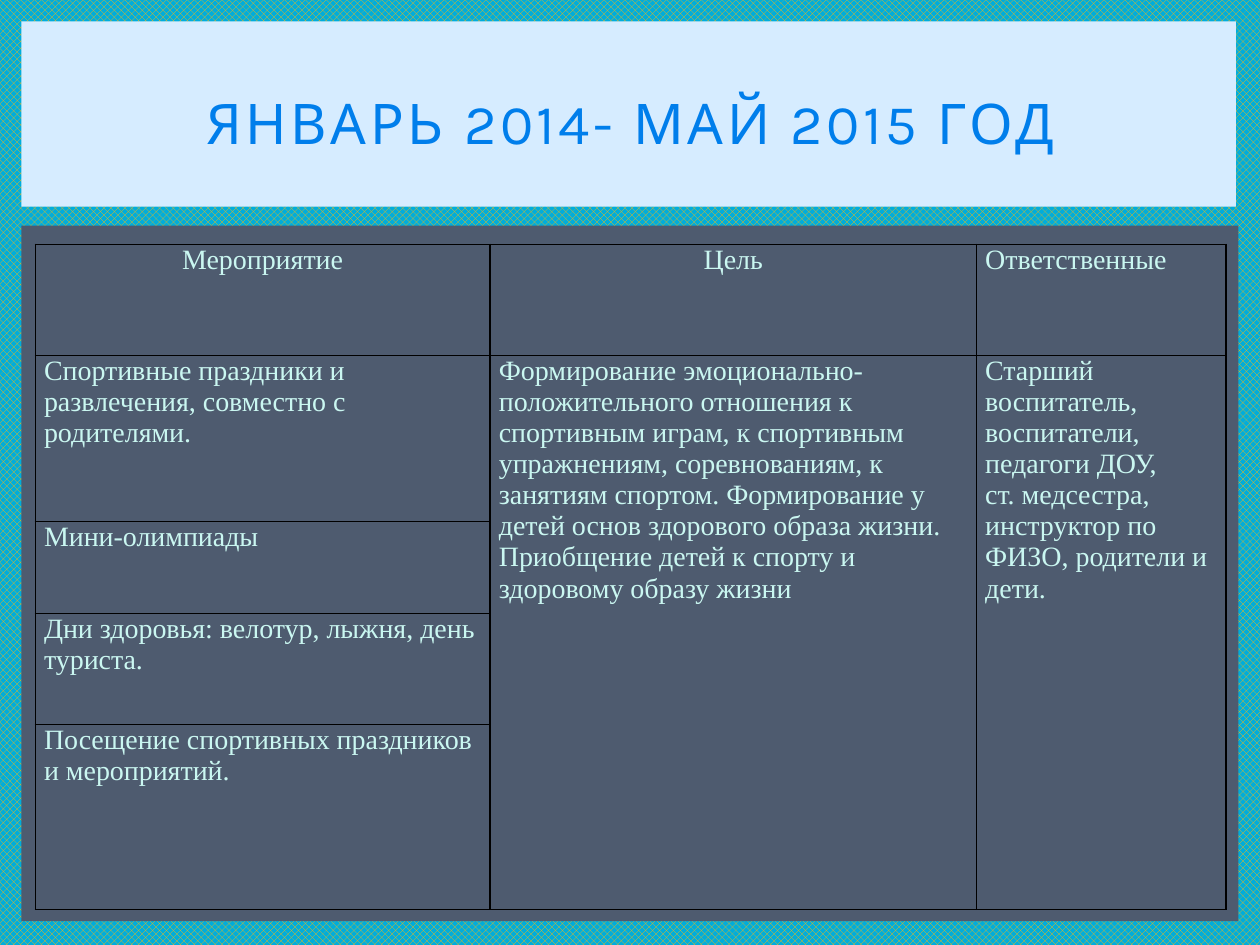
"""Build the slide with the January 2014 – May 2015 sports events plan."""
from typing import NamedTuple

from lxml.etree import SubElement
from pptx import Presentation
from pptx.dml.color import RGBColor
from pptx.enum.dml import MSO_PATTERN
from pptx.enum.shapes import MSO_SHAPE
from pptx.enum.text import MSO_ANCHOR, MSO_AUTO_SIZE, PP_ALIGN
from pptx.oxml.ns import qn
from pptx.util import Inches, Pt

TEAL = RGBColor(0x00, 0xAD, 0xDC)
AMBER = RGBColor(0xFE, 0xB8, 0x0A)
SLATE = RGBColor(0x4E, 0x5B, 0x6F)
PALE_BLUE = RGBColor(0xD6, 0xEC, 0xFF)
BLUE = RGBColor(0x00, 0x7E, 0xEB)
MINT = RGBColor(0xCA, 0xF7, 0xF1)
BLACK = RGBColor(0x00, 0x00, 0x00)

COLUMN_WIDTHS = (3.61, 3.86, 1.98)
ROW_HEIGHTS = (0.88, 1.32, 0.73, 0.88, 1.47)


class Panel(NamedTuple):
    left: float
    top: float
    width: float
    height: float
    color: RGBColor


class Entry(NamedTuple):
    row: int
    column: int
    text: str
    align: PP_ALIGN = PP_ALIGN.LEFT
    row_span: int = 1


PANELS = (
    Panel(0.17, 1.79, 9.66, 5.52, SLATE),
    Panel(0.17, 0.17, 9.64, 1.47, PALE_BLUE),
)
ENTRIES = (
    Entry(0, 0, "Мероприятие", PP_ALIGN.CENTER),
    Entry(0, 1, "Цель", PP_ALIGN.CENTER),
    Entry(0, 2, "Ответственные"),
    Entry(1, 0, "Спортивные праздники и развлечения, совместно с родителями."),
    Entry(2, 0, "Мини-олимпиады"),
    Entry(3, 0, "Дни здоровья: велотур, лыжня, день туриста."),
    Entry(4, 0, "Посещение спортивных праздников и мероприятий."),
    Entry(
        1, 1,
        "Формирование эмоционально-положительного отношения к спортивным играм, "
        "к спортивным упражнениям, соревнованиям, к занятиям спортом. "
        "Формирование у детей основ здорового образа жизни. "
        "Приобщение детей к спорту и здоровому образу жизни",
        row_span=4,
    ),
    Entry(
        1, 2,
        "Старший воспитатель, воспитатели,\nпедагоги ДОУ,\nст. медсестра,\n"
        "инструктор по ФИЗО, родители и дети.",
        row_span=4,
    ),
)


def format_text(text_frame, font_name: str, size: int, color: RGBColor, align: PP_ALIGN) -> None:
    for paragraph in text_frame.paragraphs:
        paragraph.alignment = align
        for run in paragraph.runs:
            run.font.name = font_name
            run.font.size = Pt(size)
            run.font.color.rgb = color


def add_panel(slide, panel: Panel) -> None:
    backdrop = slide.shapes.add_shape(MSO_SHAPE.RECTANGLE, *map(Inches, panel[:4]))
    backdrop.shadow.inherit = False
    backdrop.fill.solid()
    backdrop.fill.fore_color.rgb = panel.color
    backdrop.line.fill.background()


def set_title(slide, text: str) -> None:
    title = slide.shapes.title
    slide.shapes.element.append(title.element)
    title.left, title.top, title.width, title.height = map(Inches, (0.42, 0.39, 9.17, 1.15))
    frame = title.text_frame
    frame.text = text
    frame.auto_size = MSO_AUTO_SIZE.NONE
    frame.vertical_anchor = MSO_ANCHOR.MIDDLE
    format_text(frame, "Karla", 32, BLUE, PP_ALIGN.CENTER)
    for run in frame.paragraphs[0].runs:
        run.font._element.set("spc", "200")


def style_cell(cell) -> None:
    cell.margin_left = cell.margin_right = Inches(0.07)
    cell.margin_top = cell.margin_bottom = 0
    cell.vertical_anchor = MSO_ANCHOR.TOP
    properties = cell._tc.get_or_add_tcPr()
    for side in ("a:lnL", "a:lnR", "a:lnT", "a:lnB"):
        border = SubElement(properties, qn(side), w=str(Pt(1)))
        border_fill = SubElement(border, qn("a:solidFill"))
        SubElement(border_fill, qn("a:srgbClr"), val=str(BLACK))
    cell.fill.background()


def add_plan_table(slide) -> None:
    plan = slide.shapes.add_table(
        len(ROW_HEIGHTS), len(COLUMN_WIDTHS), Inches(0.28), Inches(1.94),
        Inches(sum(COLUMN_WIDTHS)), Inches(sum(ROW_HEIGHTS)),
    ).table
    plan.first_row = plan.horz_banding = False
    for column, width in zip(plan.columns, COLUMN_WIDTHS):
        column.width = Inches(width)
    for row, height in zip(plan.rows, ROW_HEIGHTS):
        row.height = Inches(height)
    for cell in plan.iter_cells():
        style_cell(cell)
    for entry in ENTRIES:
        cell = plan.cell(entry.row, entry.column)
        if entry.row_span > 1:
            cell.merge(plan.cell(entry.row + entry.row_span - 1, entry.column))
        cell.text_frame.text = entry.text
        format_text(cell.text_frame, "Times New Roman", 16, MINT, entry.align)


def main() -> None:
    presentation = Presentation()
    presentation.slide_width, presentation.slide_height = Inches(10), Inches(7.5)
    slide = presentation.slides.add_slide(presentation.slide_layouts[5])
    backdrop = slide.background.fill
    backdrop.patterned()
    backdrop.pattern = MSO_PATTERN.SOLID_DIAMOND
    backdrop.fore_color.rgb = AMBER
    backdrop.back_color.rgb = TEAL
    for panel in PANELS:
        add_panel(slide, panel)
    set_title(slide, "ЯНВАРЬ 2014- МАЙ 2015 ГОД")
    add_plan_table(slide)
    presentation.save("out.pptx")


if __name__ == "__main__":
    main()
